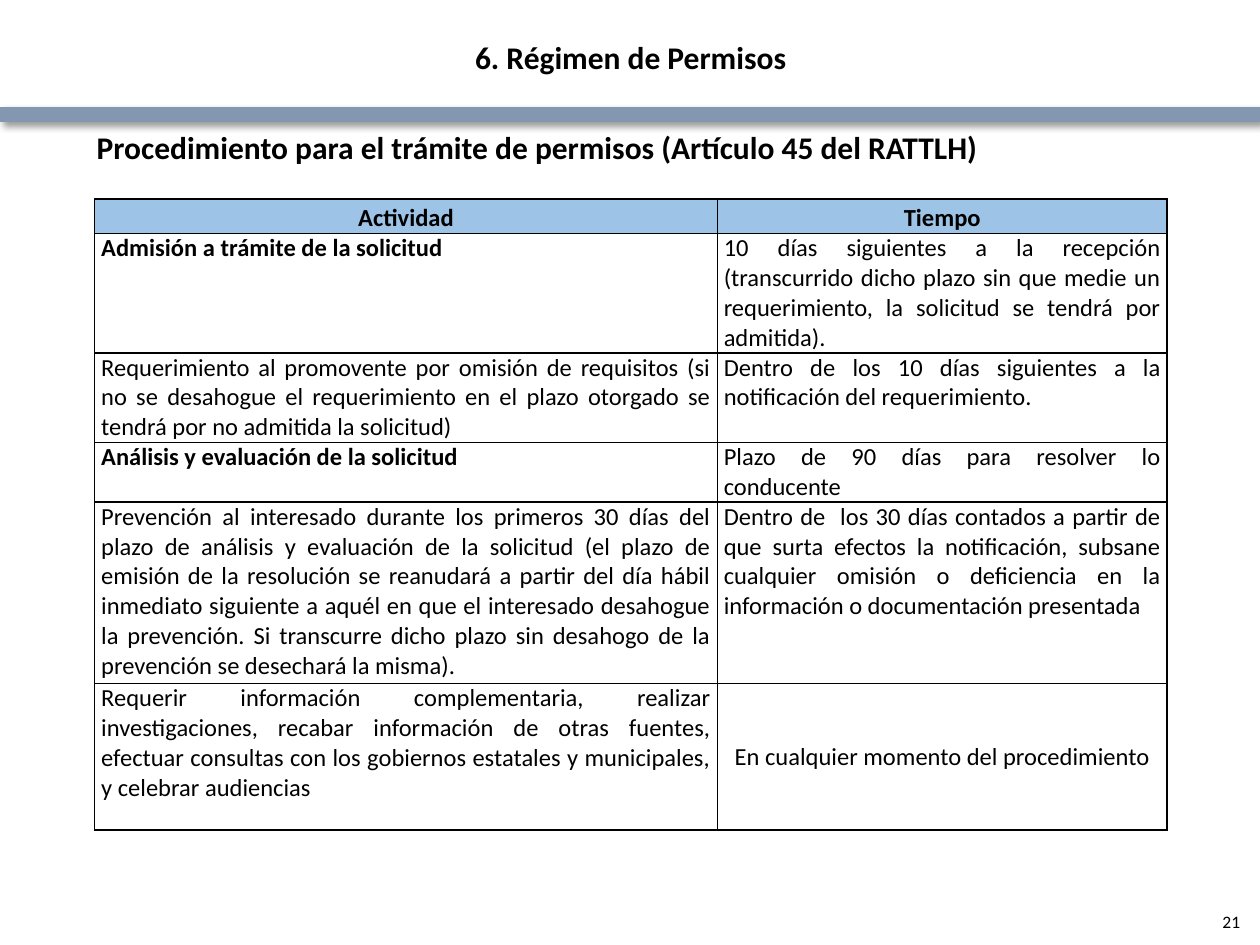
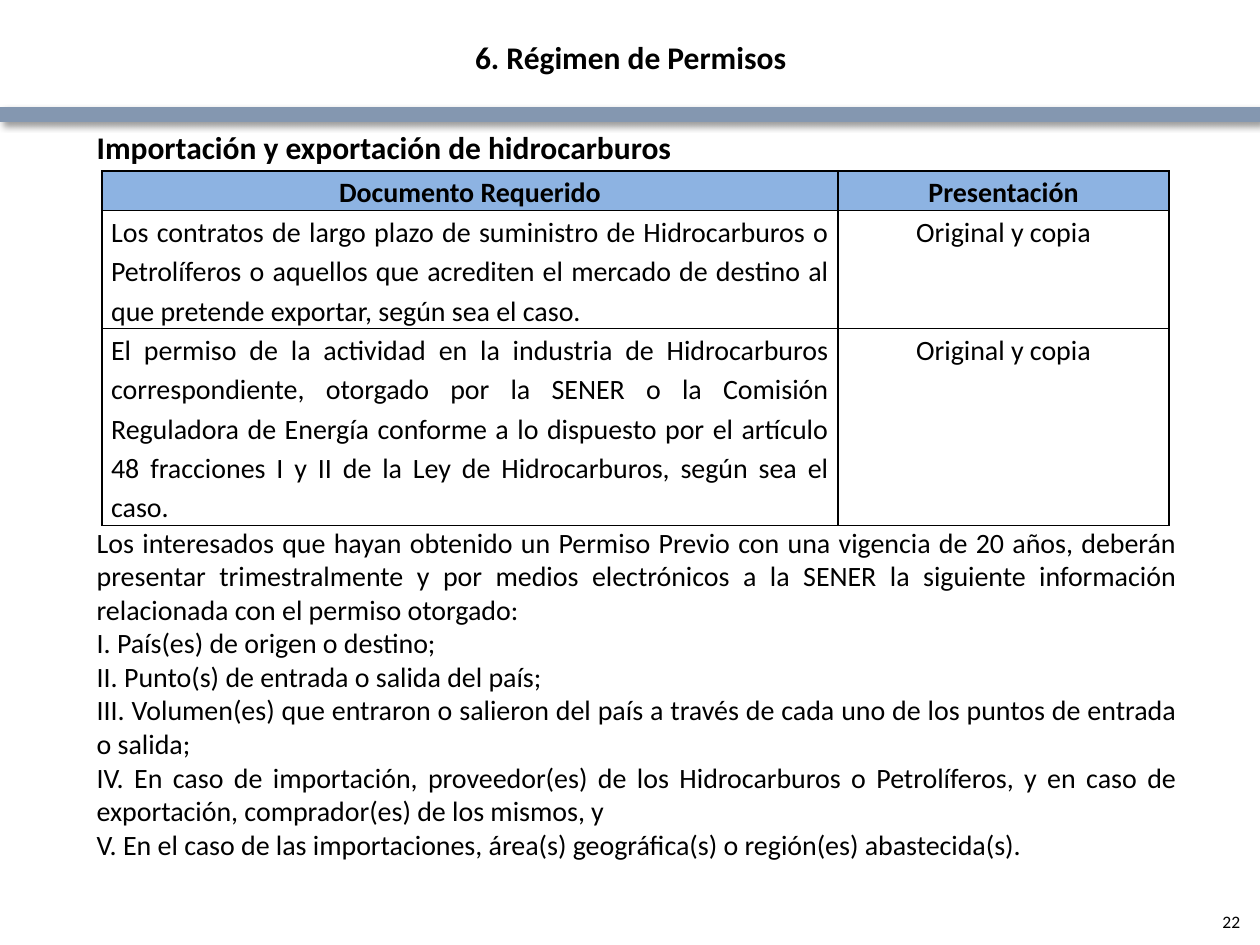
from dataclasses import dataclass
from typing import NamedTuple

from lxml import etree
from pptx import Presentation
from pptx import util as u
from pptx.dml import color
from pptx.enum import shapes, text
from pptx.oxml import ns

LEFT, CENTER, RIGHT, JUSTIFY = (text.PP_ALIGN.LEFT, text.PP_ALIGN.CENTER,
                                text.PP_ALIGN.RIGHT, text.PP_ALIGN.JUSTIFY)
TOP, MIDDLE = text.MSO_ANCHOR.TOP, text.MSO_ANCHOR.MIDDLE


@dataclass(frozen=True)
class Theme:
    font: str = "Calibri"
    ink: str = "000000"
    band: str = "8497B0"
    schedule_header: str = "9DC3E6"
    documents_header: str = "8DB3E2"
    heading_size: int = 18
    body_size: int = 16
    schedule_size: int = 14
    number_size: int = 10
    border_width: int = 1
    loose_spacing: float = 1.15


class Box(NamedTuple):
    left: float
    top: float
    width: float
    height: float

    def lengths(self):
        return [u.Cm(side) for side in self]


class Cell(NamedTuple):
    words: str
    align: text.PP_ALIGN = JUSTIFY
    bold: bool = False
    anchor: text.MSO_ANCHOR = TOP


class Grid(NamedTuple):
    columns: list
    heights: list
    header_fill: str
    size: int
    side_margin: float
    body_spacing: float


THEME = Theme()
TITLE = "6. Régimen de Permisos"
TITLE_BOX = Box(2.82, 0.64, 19.79, 1.02)
BAND_BOX = Box(0, 2.16, 25.4, 0.3)
HEADING_BOX = Box(1.7, 2.46, 22.28, 1.02)
NUMBER_BOX = Box(19.53, 18.06, 5.72, 1.02)


def rgb(value):
    return color.RGBColor.from_string(value)


def style_paragraph(paragraph, size, align, bold=False, spacing=None):
    paragraph.alignment = align
    if spacing:
        paragraph.line_spacing = spacing
    for run in paragraph.runs:
        run.font.name = THEME.font
        run.font.size = u.Pt(size)
        run.font.bold = bold
        run.font.color.rgb = rgb(THEME.ink)


def fill_frame(frame, words, size, align, bold=False, anchor=TOP):
    frame.text = words
    frame.word_wrap = True
    frame.auto_size = text.MSO_AUTO_SIZE.NONE
    frame.vertical_anchor = anchor
    for paragraph in frame.paragraphs:
        style_paragraph(paragraph, size, align, bold)


def add_words(slide, box, words, size, align, bold=False, anchor=TOP):
    frame = slide.shapes.add_textbox(*box.lengths()).text_frame
    fill_frame(frame, words, size, align, bold, anchor)


def add_title(slide, box):
    title = slide.shapes.title
    title.left, title.top, title.width, title.height = box.lengths()
    fill_frame(title.text_frame, TITLE, THEME.heading_size, CENTER, bold=True)


def add_band(slide, box):
    band = slide.shapes.add_shape(shapes.MSO_SHAPE.RECTANGLE, *box.lengths())
    band.fill.solid()
    band.fill.fore_color.rgb = rgb(THEME.band)
    band.line.fill.background()
    band.shadow.inherit = False
    effects = band.element.spPr.find(ns.qn("a:effectLst"))
    shadow = etree.SubElement(effects, ns.qn("a:outerShdw"), blurRad=str(u.Pt(4)),
                              dist=str(u.Pt(3)), dir="2700000", algn="tl", rotWithShape="0")
    tint = etree.SubElement(shadow, ns.qn("a:srgbClr"), val=THEME.ink)
    etree.SubElement(tint, ns.qn("a:alpha"), val="40000")


def draw_borders(cell):
    properties = cell._tc.get_or_add_tcPr()
    for position, side in enumerate(("lnL", "lnR", "lnT", "lnB")):
        line = etree.Element(ns.qn(f"a:{side}"), w=str(u.Pt(THEME.border_width)))
        paint = etree.SubElement(line, ns.qn("a:solidFill"))
        etree.SubElement(paint, ns.qn("a:srgbClr"), val=THEME.ink)
        properties.insert(position, line)


def fill_cell(cell, content, grid, is_header):
    cell.margin_left = cell.margin_right = u.Cm(grid.side_margin)
    cell.margin_top = cell.margin_bottom = 0
    cell.vertical_anchor = content.anchor
    cell.text_frame.text = content.words
    spacing = THEME.loose_spacing if is_header else grid.body_spacing
    style_paragraph(cell.text_frame.paragraphs[0], grid.size, content.align,
                    content.bold, spacing)
    if is_header:
        cell.fill.solid()
        cell.fill.fore_color.rgb = rgb(grid.header_fill)
    else:
        cell.fill.background()
    draw_borders(cell)


def add_grid(slide, left, top, grid, headers, body):
    box = Box(left, top, sum(grid.columns), sum(grid.heights))
    rows = [[Cell(words, CENTER, True) for words in headers], *body]
    table = slide.shapes.add_table(len(rows), len(headers), *box.lengths()).table
    table.first_row = table.horz_banding = False
    for column, width in zip(table.columns, grid.columns):
        column.width = u.Cm(width)
    for index, (row, height, contents) in enumerate(zip(table.rows, grid.heights, rows)):
        row.height = u.Cm(height)
        for cell, content in zip(row.cells, contents):
            fill_cell(cell, content, grid, index == 0)


def add_permit_slide(deck, heading, number):
    slide = deck.slides.add_slide(deck.slide_layouts[5])
    add_band(slide, BAND_BOX)
    add_title(slide, TITLE_BOX)
    add_words(slide, HEADING_BOX, heading, THEME.heading_size, JUSTIFY, bold=True)
    add_words(slide, NUMBER_BOX, str(number), THEME.number_size, RIGHT, anchor=MIDDLE)
    return slide


def build_procedure(deck):
    slide = add_permit_slide(
        deck, "Procedimiento para el trámite de permisos (Artículo 45 del RATTLH)", 21)
    grid = Grid([12.55, 9.07], [0.69, 2.41, 1.8, 1.19, 3.66, 2.95],
                THEME.schedule_header, THEME.schedule_size, 0.13, 1.0)
    steps = [
        [Cell("Admisión a trámite de la solicitud", LEFT, True),
         Cell("10 días siguientes a la recepción (transcurrido dicho plazo sin que medie "
              "un requerimiento, la solicitud se tendrá por admitida).")],
        [Cell("Requerimiento al promovente por omisión de requisitos (si no se desahogue "
              "el requerimiento en el plazo otorgado se tendrá por no admitida la solicitud)"),
         Cell("Dentro de los 10 días siguientes a la notificación del requerimiento.")],
        [Cell("Análisis y evaluación de la solicitud", LEFT, True),
         Cell("Plazo de 90 días para resolver lo conducente")],
        [Cell("Prevención al interesado durante los primeros 30 días del plazo de análisis "
              "y evaluación de la solicitud (el plazo de emisión de la resolución se "
              "reanudará a partir del día hábil inmediato siguiente a aquél en que el "
              "interesado desahogue la prevención. Si transcurre dicho plazo sin desahogo "
              "de la prevención se desechará la misma)."),
         Cell("Dentro de  los 30 días contados a partir de que surta efectos la "
              "notificación, subsane cualquier omisión o deficiencia en la información "
              "o documentación presentada")],
        [Cell("Requerir información complementaria, realizar investigaciones, recabar "
              "información de otras fuentes, efectuar consultas con los gobiernos "
              "estatales y municipales, y celebrar audiencias"),
         Cell("En cualquier momento del procedimiento", CENTER, anchor=MIDDLE)],
    ]
    add_grid(slide, 1.91, 4.01, grid, ["Actividad", "Tiempo"], steps)


def build_trade(deck):
    slide = add_permit_slide(deck, "Importación y exportación de hidrocarburos", 22)
    grid = Grid([14.83, 6.68], [0.79, 2.33, 3.89], THEME.documents_header,
                THEME.body_size, 0.18, THEME.loose_spacing)
    documents = [
        "Los contratos de largo plazo de suministro de Hidrocarburos o Petrolíferos o "
        "aquellos que acrediten el mercado de destino al que pretende exportar, según "
        "sea el caso.",
        "El permiso de la actividad en la industria de Hidrocarburos correspondiente, "
        "otorgado por la SENER o la Comisión Reguladora de Energía conforme a lo "
        "dispuesto por el artículo 48 fracciones I y II de la Ley de Hidrocarburos, "
        "según sea el caso.",
    ]
    add_grid(slide, 2.06, 3.45, grid, ["Documento Requerido", "Presentación"],
             [[Cell(document), Cell("Original y copia", CENTER)] for document in documents])
    reporting = [
        "Los interesados que hayan obtenido un Permiso Previo con una vigencia de 20 años, "
        "deberán presentar trimestralmente y por medios electrónicos a la SENER la "
        "siguiente información relacionada con el permiso otorgado:",
        "I. País(es) de origen o destino;",
        "II. Punto(s) de entrada o salida del país;",
        "III. Volumen(es) que entraron o salieron del país a través de cada uno de los "
        "puntos de entrada o salida;",
        "IV. En caso de importación, proveedor(es) de los Hidrocarburos o Petrolíferos, "
        "y en caso de exportación, comprador(es) de los mismos, y",
        "V. En el caso de las importaciones, área(s) geográfica(s) o región(es) "
        "abastecida(s).",
    ]
    add_words(slide, Box(1.7, 10.46, 22.28, 7.1), "\n".join(reporting),
              THEME.body_size, JUSTIFY)


def main():
    deck = Presentation()
    deck.slide_width, deck.slide_height = u.Cm(25.4), u.Cm(19.05)
    build_procedure(deck)
    build_trade(deck)
    deck.save("out.pptx")


if __name__ == "__main__":
    main()
